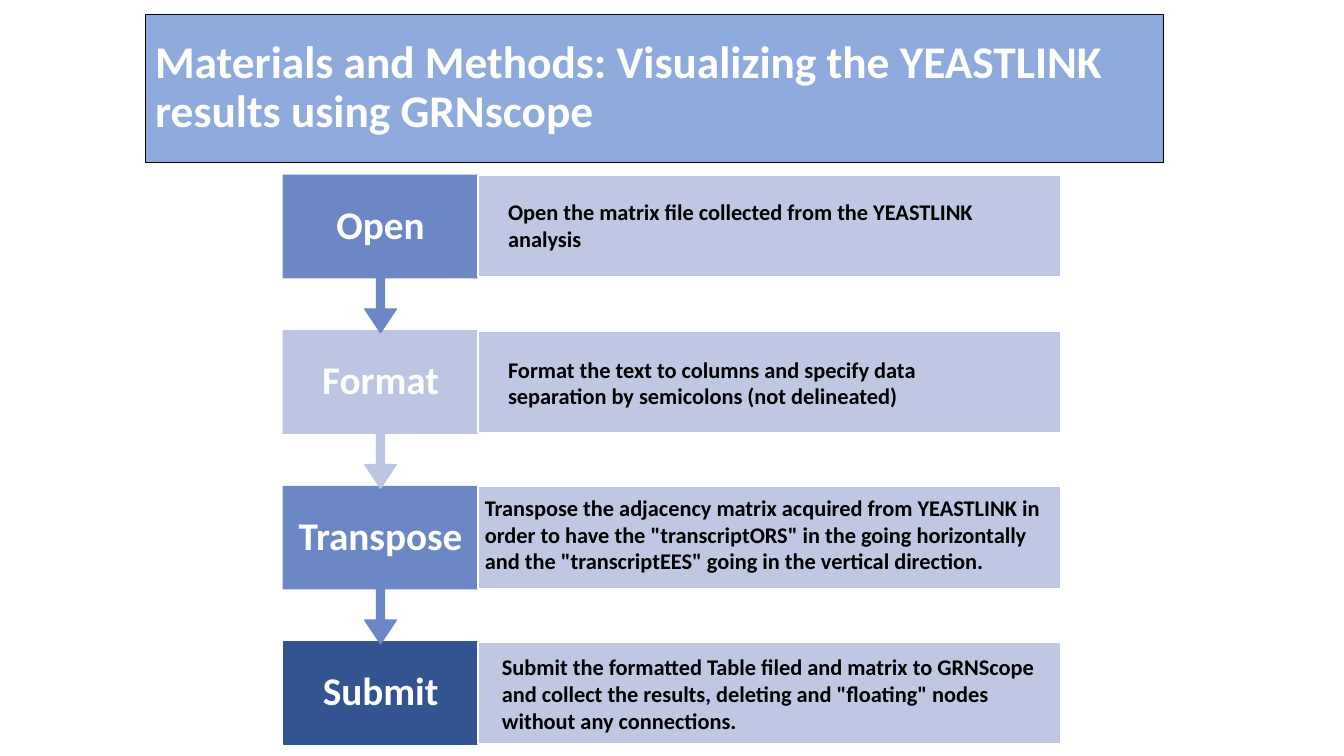
from dataclasses import dataclass

from lxml.etree import SubElement
from pptx import Presentation
from pptx.dml.color import RGBColor
from pptx.enum.shapes import MSO_SHAPE
from pptx.enum.text import MSO_ANCHOR, MSO_AUTO_SIZE, PP_ALIGN
from pptx.oxml.ns import qn
from pptx.shapes.autoshape import Shape
from pptx.shapes.shapetree import SlideShapes
from pptx.text.text import TextFrame
from pptx.util import Inches, Pt


@dataclass(frozen=True)
class Theme:
    font: str = "Calibri"
    white: str = "FFFFFF"
    black: str = "000000"
    banner: str = "8FAADC"
    panel: str = "B9C2E1"
    medium: str = "6C87C5"
    pale: str = "BCC6E2"
    dark: str = "325491"
    title_size: float = 32.4
    step_size: float = 28
    detail_size: float = 16


@dataclass(frozen=True)
class Box:
    left: float
    top: float
    width: float
    height: float

    def lengths(self) -> list[Inches]:
        return [Inches(v) for v in (self.left, self.top, self.width, self.height)]


@dataclass(frozen=True)
class Step:
    name: str
    color: str
    detail: str
    detail_box: Box


THEME = Theme()
STEP_LEFT, STEP_WIDTH, STEP_HEIGHT = 2.81, 1.93, 1.01
CALLOUT_HEIGHT = 1.56
CALLOUT_ADJUSTMENTS = (0.05, 0.1, 0.15, 0.65)
PANEL_WIDTH = 5.78
FIRST_TOP, LAST_TOP = 1.74, 6.37

TITLE = "Materials and Methods: Visualizing the YEASTLINK results using GRNscope"
STEPS = [
    Step("Open", THEME.medium,
         "Open the matrix file collected from the YEASTLINK analysis",
         Box(4.94, 1.92, 4.85, 0.64)),
    Step("Format", THEME.pale,
         "Format the text to columns and specify data separation by semicolons "
         "(not delineated)",
         Box(4.94, 3.48, 5.25, 0.64)),
    Step("Transpose", THEME.medium,
         "Transpose the adjacency matrix acquired from YEASTLINK in order to have "
         'the "transcriptORS" in the going horizontally and the "transcriptEES" '
         "going in the vertical direction.",
         Box(4.71, 4.85, 5.81, 0.91)),
    Step("Submit", THEME.dark,
         "Submit the formatted Table filed and matrix to GRNScope and collect the "
         'results, deleting and "floating" nodes without any connections.',
         Box(4.88, 6.43, 5.75, 0.91)),
]


def add_filled(shapes: SlideShapes, kind: MSO_SHAPE, box: Box, fill: str,
               line: str, line_width: float = 1) -> Shape:
    shape = shapes.add_shape(kind, *box.lengths())
    shape.shadow.inherit = False
    shape.fill.solid()
    shape.fill.fore_color.rgb = RGBColor.from_string(fill)
    shape.line.color.rgb = RGBColor.from_string(line)
    shape.line.width = Pt(line_width)
    return shape


def write(frame: TextFrame, text: str, size: float, color: str,
          align: PP_ALIGN = PP_ALIGN.LEFT, spacing: float = 1.0) -> None:
    frame.word_wrap = True
    frame.text = text
    paragraph = frame.paragraphs[0]
    paragraph.alignment = align
    paragraph.line_spacing = spacing
    for run in paragraph.runs:
        run.font.name = THEME.font
        run.font.size = Pt(size)
        run.font.bold = True
        run.font.color.rgb = RGBColor.from_string(color)


def set_opacity(shape: Shape, percent: int) -> None:
    color = shape.fill._xPr.find(qn("a:solidFill"))[0]
    SubElement(color, qn("a:alpha")).set("val", str(percent * 1000))


def add_step(shapes: SlideShapes, step: Step, top: float, is_last: bool) -> None:
    """Draw the named box, with an arrow to the next step, and its panel."""
    kind = MSO_SHAPE.RECTANGLE if is_last else MSO_SHAPE.DOWN_ARROW_CALLOUT
    height = STEP_HEIGHT if is_last else CALLOUT_HEIGHT
    label = add_filled(shapes, kind, Box(STEP_LEFT, top, STEP_WIDTH, height),
                       step.color, step.color)
    if not is_last:
        for index, value in enumerate(CALLOUT_ADJUSTMENTS):
            label.adjustments[index] = value
    frame = label.text_frame
    frame.vertical_anchor = MSO_ANCHOR.MIDDLE
    write(frame, step.name, THEME.step_size, THEME.white, PP_ALIGN.CENTER, 0.9)

    panel = add_filled(
        shapes, MSO_SHAPE.RECTANGLE,
        Box(STEP_LEFT + STEP_WIDTH, top, PANEL_WIDTH, STEP_HEIGHT),
        THEME.panel, THEME.white)
    set_opacity(panel, 90)


def add_title(shapes: SlideShapes) -> None:
    banner = add_filled(shapes, MSO_SHAPE.RECTANGLE, Box(1.44, 0.14, 10.1, 1.47),
                        THEME.banner, THEME.black, 0.75)
    banner.text_frame.vertical_anchor = MSO_ANCHOR.MIDDLE
    write(banner.text_frame, TITLE, THEME.title_size, THEME.white, spacing=0.9)


def add_detail(shapes: SlideShapes, step: Step) -> None:
    frame = shapes.add_textbox(*step.detail_box.lengths()).text_frame
    write(frame, step.detail, THEME.detail_size, THEME.black)
    frame.auto_size = MSO_AUTO_SIZE.SHAPE_TO_FIT_TEXT


def main() -> None:
    deck = Presentation()
    deck.slide_width, deck.slide_height = Inches(13.33), Inches(7.5)
    shapes = deck.slides.add_slide(deck.slide_layouts[6]).shapes

    last = len(STEPS) - 1
    pitch = (LAST_TOP - FIRST_TOP) / last
    # Last step first, so that each arrow tip lies over the box below it.
    for index in range(last, -1, -1):
        add_step(shapes, STEPS[index], FIRST_TOP + index * pitch, index == last)
    add_title(shapes)
    for step in STEPS:
        add_detail(shapes, step)
    deck.save("out.pptx")


if __name__ == "__main__":
    main()
